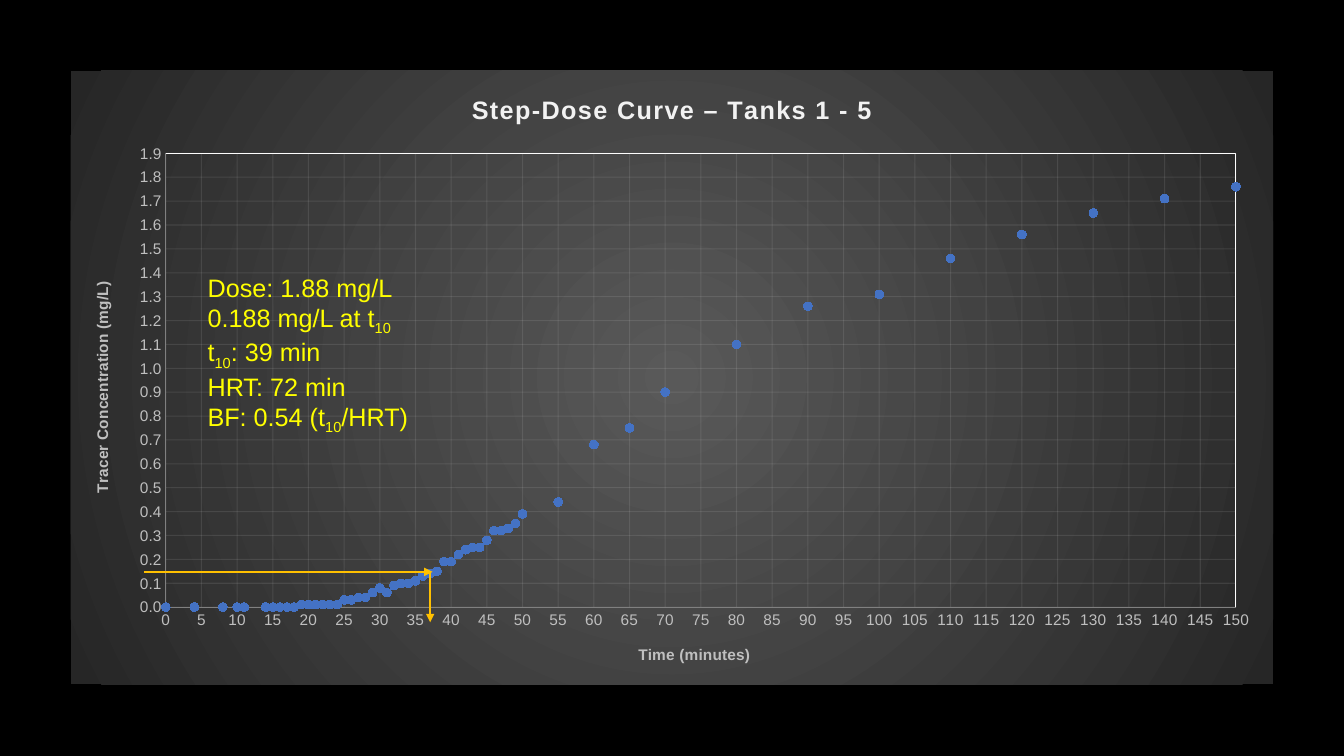
from lxml import etree
from pptx import Presentation
from pptx.chart.data import XyChartData
from pptx.dml.color import RGBColor
from pptx.enum.chart import XL_CHART_TYPE, XL_MARKER_STYLE, XL_TICK_MARK
from pptx.enum.shapes import MSO_CONNECTOR
from pptx.oxml import parse_xml
from pptx.oxml.ns import nsdecls, qn
from pptx.util import Pt

SCATTER = XL_CHART_TYPE.XY_SCATTER
CIRCLE = XL_MARKER_STYLE.CIRCLE
NO_TICK = XL_TICK_MARK.NONE
STRAIGHT = MSO_CONNECTOR.STRAIGHT

COLORS = {
    "background": "000000", "title": "F2F2F2", "label": "BFBFBF",
    "axis": "808080", "grid": "F2F2F2", "frame": "FFFFFF",
    "marker": "4472C4", "arrow": "FFC000", "note": "FFFF00",
    "center": "595959", "edge": "262626",
}
FONT = "Arial"
CHART_TITLE = "Step-Dose Curve – Tanks 1 - 5"
TIMES = [0, 4, *range(8, 51), 55, 60, 65, *range(70, 151, 10)]
CONCENTRATIONS = [
    0, 0, 0, None, 0, 0, None, None, 0, 0, 0, 0, 0,
    0.01, 0.01, 0.01, 0.01, 0.01, 0.01,
    0.03, 0.03, 0.04, 0.04, 0.06, 0.08, 0.06, 0.09, 0.1, 0.1, 0.11, 0.13,
    0.14, 0.15, 0.19, 0.19, 0.22, 0.24, 0.25, 0.25, 0.28, 0.32, 0.32, 0.33,
    0.35, 0.39, 0.44, 0.68, 0.75, 0.9, 1.1, 1.26, 1.31, 1.46, 1.56, 1.65,
    1.71, 1.76,
]
NOTES = [
    [("Dose: 1.88 mg/L", False)],
    [("0.188 mg/L at t", False), ("10", True)],
    [("t", False), ("10", True), (": 39 min", False)],
    [("HRT: 72 min", False)],
    [("BF: 0.54 (t", False), ("10", True), ("/HRT)", False)],
]
CHART_BOX = (50.4, 50.4, 859, 438.5)
NOTE_BOX = (141.2, 190.8, 176.5, 117)
PLOT = (118.4, 109.6, 764.4, 324.2)
ARROWS = [(103, 408.5, 309, 408.5), (307.3, 408.5, 307.3, 444.5)]


def rgb(name):
    return RGBColor.from_string(COLORS[name])


def write(paragraph, text, size, color, bold=False, subscript=False, spacing=0):
    run = paragraph.add_run()
    run.text = text
    run.font.name = FONT
    run.font.size = Pt(size)
    run.font.bold = bold
    run.font.color.rgb = rgb(color)
    properties = run.font._element
    if subscript:
        properties.set("baseline", "-25000")
    if spacing:
        properties.set("spc", str(spacing * 100))


def manual_layout(left, top, width=None, height=None):
    left = (left - CHART_BOX[0]) / CHART_BOX[2]
    top = (top - CHART_BOX[1]) / CHART_BOX[3]
    parts = [("xMode", "edge"), ("yMode", "edge"),
             ("x", f"{left:.4f}"), ("y", f"{top:.4f}")]
    if width:
        parts = [("layoutTarget", "inner"), *parts,
                 ("w", f"{width / CHART_BOX[2]:.4f}"),
                 ("h", f"{height / CHART_BOX[3]:.4f}")]
    content = "".join(f'<c:{tag} val="{value}"/>' for tag, value in parts)
    return parse_xml(f'<c:layout {nsdecls("c")}><c:manualLayout>{content}'
                     '</c:manualLayout></c:layout>')


def drop_layout(element):
    layout = element.find(qn("c:layout"))
    if layout is not None:
        element.remove(layout)


def set_title(title, text, left, top, size, color, spacing=0):
    write(title.text_frame.paragraphs[0], text, size, color, bold=True, spacing=spacing)
    element = title._element
    drop_layout(element)
    element.find(qn("c:tx")).addnext(manual_layout(left, top))


def style_axis(axis, maximum, step, number_format, title, left, top):
    axis.minimum_scale, axis.maximum_scale, axis.major_unit = 0, maximum, step
    axis.major_tick_mark = axis.minor_tick_mark = NO_TICK
    labels = axis.tick_labels
    labels.number_format = number_format
    labels.number_format_is_linked = False
    labels.font.name, labels.font.size = FONT, Pt(11)
    labels.font.color.rgb = rgb("label")
    axis.has_major_gridlines = True
    for line, color in ((axis.format.line, "axis"),
                        (axis.major_gridlines.format.line, "grid")):
        line.width = Pt(0.75)
        line.color.rgb = rgb(color)
    gridlines = axis._element.find(qn("c:majorGridlines"))
    for color in gridlines.iter(qn("a:srgbClr")):
        etree.SubElement(color, qn("a:alpha")).set("val", "10000")
    axis.has_title = True
    set_title(axis.axis_title, title, left, top, 11, "label")


def drop_blank_points(series):
    cache = series._element.find(qn("c:yVal")).find(".//" + qn("c:numCache"))
    for point in cache.findall(qn("c:pt")):
        if CONCENTRATIONS[int(point.get("idx"))] is None:
            cache.remove(point)


def add_chart(slide):
    data = XyChartData()
    series_data = data.add_series("Series 1")
    for time, concentration in zip(TIMES, CONCENTRATIONS):
        series_data.add_data_point(time, concentration)
    chart = slide.shapes.add_chart(SCATTER, *map(Pt, CHART_BOX), data).chart
    chart.has_legend = False
    chart.font.name, chart.font.size = FONT, Pt(10)
    chart.font.color.rgb = rgb("frame")
    chart.has_title = True
    set_title(chart.chart_title, CHART_TITLE, 333.8, 63.3, 18, "title", spacing=1)
    style_axis(chart.category_axis, 150, 5, "#,##0", "Time (minutes)", 454, 458)
    style_axis(chart.value_axis, 1.9, 0.1, "0.0", "Tracer Concentration (mg/L)", 63.5, 199)

    series = chart.plots[0].series[0]
    drop_blank_points(series)
    series.format.line.fill.background()
    series.marker.style, series.marker.size = CIRCLE, 6
    series.marker.format.fill.solid()
    series.marker.format.fill.fore_color.rgb = rgb("marker")
    series.marker.format.line.fill.background()

    plot_area = chart._chartSpace.chart.plotArea
    drop_layout(plot_area)
    plot_area.insert(0, manual_layout(*PLOT))
    for shape_properties in plot_area.findall(qn("c:spPr")):
        plot_area.remove(shape_properties)
    plot_area.append(parse_xml(
        f'<c:spPr {nsdecls("c", "a")}><a:noFill/><a:ln w="9525"><a:solidFill>'
        f'<a:srgbClr val="{COLORS["frame"]}"/></a:solidFill></a:ln></c:spPr>'))
    chart._chartSpace.chart.addnext(parse_xml(
        f'<c:spPr {nsdecls("c", "a")}><a:gradFill><a:gsLst>'
        f'<a:gs pos="0"><a:srgbClr val="{COLORS["center"]}"/></a:gs>'
        f'<a:gs pos="100000"><a:srgbClr val="{COLORS["edge"]}"/></a:gs></a:gsLst>'
        '<a:path path="circle"><a:fillToRect l="50000" t="50000" r="50000" b="50000"/>'
        '</a:path></a:gradFill><a:ln><a:noFill/></a:ln></c:spPr>'))


def add_arrow(slide, ends):
    arrow = slide.shapes.add_connector(STRAIGHT, *map(Pt, ends))
    arrow.line.width = Pt(1.5)
    arrow.line.color.rgb = rgb("arrow")
    properties = arrow._element.spPr
    etree.SubElement(properties.find(qn("a:ln")), qn("a:tailEnd")).set("type", "triangle")
    etree.SubElement(properties, qn("a:effectLst"))


def add_notes(slide):
    frame = slide.shapes.add_textbox(*map(Pt, NOTE_BOX)).text_frame
    frame.word_wrap = True
    for index, pieces in enumerate(NOTES):
        paragraph = frame.add_paragraph() if index else frame.paragraphs[0]
        for text, subscript in pieces:
            write(paragraph, text, 18, "note", subscript=subscript)


def main():
    presentation = Presentation()
    presentation.slide_width, presentation.slide_height = Pt(960), Pt(540)
    slide = presentation.slides.add_slide(presentation.slide_layouts[6])
    slide.background.fill.solid()
    slide.background.fill.fore_color.rgb = rgb("background")
    add_chart(slide)
    for ends in ARROWS:
        add_arrow(slide, ends)
    add_notes(slide)
    presentation.save("out.pptx")


if __name__ == "__main__":
    main()
